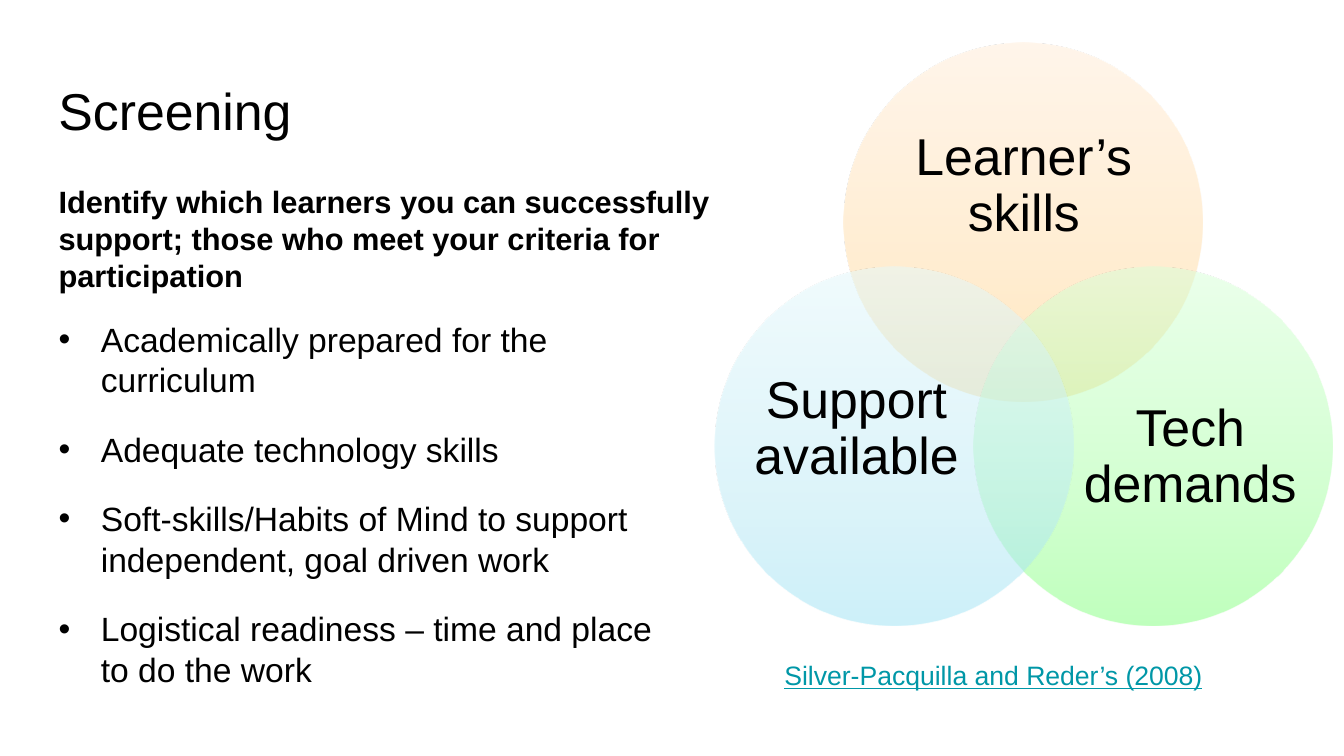
import pptx
import pptx.util
import pptx.dml.color
import pptx.enum.shapes
import pptx.enum.text
import pptx.oxml
import pptx.oxml.ns

RGB = pptx.dml.color.RGBColor
PP_ALIGN = pptx.enum.text.PP_ALIGN
MIDDLE = pptx.enum.text.MSO_ANCHOR.MIDDLE

BLACK = RGB(0x00, 0x00, 0x00)
LINK_TEAL = RGB(0x00, 0x97, 0xA7)
# Gradient colours from the bottom of a circle to its top
ORANGE = (RGB(0xFF, 0xD1, 0x7D), RGB(0xFF, 0xDC, 0xA3), RGB(0xFF, 0xED, 0xD8))
GREEN = (RGB(0x81, 0xFF, 0x7B), RGB(0xA6, 0xFF, 0xA3), RGB(0xD9, 0xFF, 0xD9))
BLUE = (RGB(0x9C, 0xE3, 0xF5), RGB(0xBB, 0xEA, 0xF6), RGB(0xE4, 0xF9, 0xFC))
STOPS = (0, 35, 100)

# A grid of 100 columns and 100 rows
WIDTH, HEIGHT = pptx.util.Inches(13.33), pptx.util.Inches(7.5)
COL, ROW = WIDTH / 100, HEIGHT / 100
LEFT = 3.38
PAD = pptx.util.Inches(0.13)
INDENT = pptx.util.Inches(0.42)

DIAMETER = 26.7
CENTRE_X, TOP_Y = 76.14, 5.6
SHIFT_X, SHIFT_Y = 9.64, 29.73

BASE_FONT = {"name": "Arial"}
LABEL = {"size": pptx.util.Pt(37)}
LABEL_PARAGRAPH = {"alignment": PP_ALIGN.CENTER, "line_spacing": 0.9}

CIRCLES = (  # colours, steps across, steps down
    (ORANGE, 0, 0),
    (GREEN, 1, 1),
    (BLUE, -1, 1),
)
LABELS = (
    ("Learner’s skills", (66.39, 14, 19.58, 21.33)),
    ("Tech demands", (80.57, 47.47, 15.98, 26.13)),
    ("Support available", (55.74, 43.73, 15.98, 26.13)),
)
CRITERIA = (
    "Academically prepared for the curriculum",
    "Adequate technology skills",
    "Soft-skills/Habits of Mind to support independent, goal driven work",
    "Logistical readiness – time and place to do the work",
)


def apply(target, values):
    for name, value in values.items():
        setattr(target, name, value)


def place(left, top, width, height):
    """Turn columns and rows into slide lengths."""
    return [round(n * unit) for n, unit in
            zip((left, top, width, height), (COL, ROW, COL, ROW))]


def add_bullet(p):
    pPr = p._p.get_or_add_pPr()
    pPr.set("marL", str(INDENT))
    pPr.set("indent", str(-INDENT))
    ns = pptx.oxml.ns.nsdecls("a")
    for xml in (f'<a:buClr {ns}><a:srgbClr val="{BLACK}"/></a:buClr>',
                f'<a:buFont {ns} typeface="Arial"/>',
                f'<a:buChar {ns} char="•"/>'):
        pPr.append(pptx.oxml.parse_xml(xml))


def add_text(slide, texts, box, font, paragraph=None, pad_x=PAD, pad_y=PAD,
             anchor=None, bullets=False, gap=0):
    tf = slide.shapes.add_textbox(*place(*box)).text_frame
    apply(tf, {"word_wrap": True, "vertical_anchor": anchor,
               "margin_left": pad_x, "margin_right": pad_x,
               "margin_top": pad_y, "margin_bottom": pad_y})
    for i, text in enumerate(texts):
        p = tf.paragraphs[0] if i == 0 else tf.add_paragraph()
        if bullets:
            add_bullet(p)
        apply(p, paragraph or {})
        if i:
            p.space_before = pptx.util.Pt(gap)
        r = p.add_run()
        r.text = text
        apply(r.font, BASE_FONT | font)
        if "underline" in font:
            r.font.color.rgb = LINK_TEAL
        else:
            r.font.color.rgb = BLACK


def add_circle(slide, colours, across, down):
    """Add a half-transparent circle with an upward gradient."""
    left = CENTRE_X - DIAMETER / 2 + across * SHIFT_X
    box = place(left, TOP_Y + down * SHIFT_Y, DIAMETER, DIAMETER)
    box[3] = box[2]
    sp = slide.shapes.add_shape(pptx.enum.shapes.MSO_SHAPE.OVAL, *box)
    sp.shadow.inherit = False
    sp.line.fill.background()
    stops = "".join(
        f'<a:gs pos="{pos * 1000}"><a:srgbClr val="{colour}">'
        '<a:alpha val="50000"/></a:srgbClr></a:gs>'
        for pos, colour in zip(STOPS, colours))
    gradient = pptx.oxml.parse_xml(
        f'<a:gradFill {pptx.oxml.ns.nsdecls("a")} rotWithShape="1">'
        f'<a:gsLst>{stops}</a:gsLst>'
        '<a:lin ang="16200000" scaled="0"/></a:gradFill>')
    sp._element.spPr.find(pptx.oxml.ns.qn("a:prstGeom")).addnext(gradient)


def main():
    prs = pptx.Presentation()
    apply(prs, {"slide_width": WIDTH, "slide_height": HEIGHT})
    slide = prs.slides.add_slide(prs.slide_layouts[6])

    add_text(slide, ["Screening"], (LEFT, 8.67, 93.17, 11.07),
             {"size": pptx.util.Pt(37)})
    add_text(slide, ["Identify which learners you can successfully support; "
                     "those who meet your criteria for participation"],
             (LEFT, 22.4, 59.12, 18),
             {"size": pptx.util.Pt(22), "bold": True})
    add_text(slide, CRITERIA, (LEFT, 40.4, 46.74, 44.67),
             {"size": pptx.util.Pt(24)}, bullets=True, gap=21)
    add_text(slide, ["Silver-Pacquilla and Reder’s (2008)"],
             (57.39, 86.27, 37.96, 6),
             {"size": pptx.util.Pt(19), "underline": True},
             pad_y=pptx.util.Inches(0.07), anchor=MIDDLE)

    for circle, (text, box) in zip(CIRCLES, LABELS):
        add_circle(slide, *circle)
        add_text(slide, [text], box, LABEL, LABEL_PARAGRAPH,
                 pad_x=0, pad_y=0, anchor=MIDDLE)

    prs.save("out.pptx")


if __name__ == "__main__":
    main()
